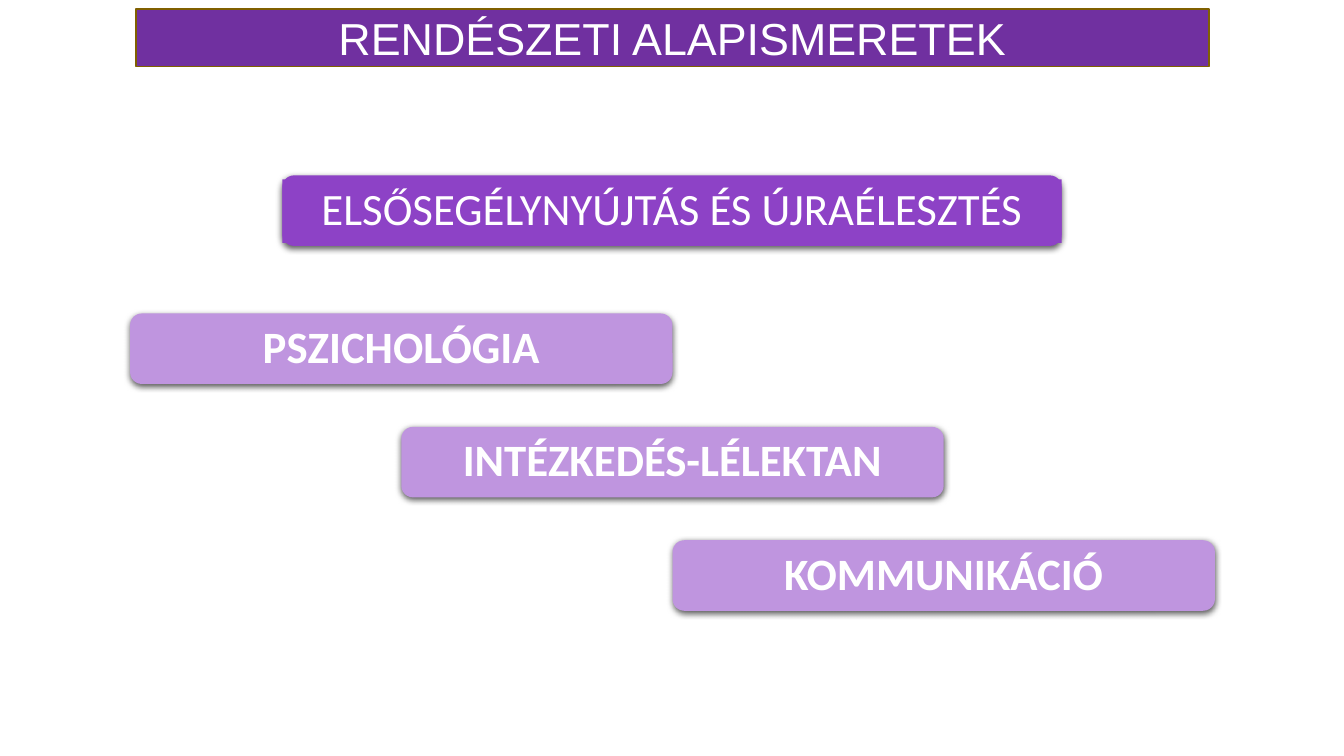
from lxml import etree
from pptx import Presentation
from pptx.dml.color import RGBColor
from pptx.enum.shapes import MSO_SHAPE as SHAPE
from pptx.enum.text import MSO_ANCHOR, MSO_AUTO_SIZE, PP_ALIGN
from pptx.oxml import parse_xml
from pptx.oxml.ns import nsdecls
from pptx.util import Inches, Pt

WHITE = RGBColor(0xFF, 0xFF, 0xFF)
TITLE_PURPLE = RGBColor(0x70, 0x30, 0xA0)
TITLE_EDGE = RGBColor(0x80, 0x60, 0x00)
PURPLE = RGBColor(0x8D, 0x42, 0xC6)
LILAC = RGBColor(0xBF, 0x95, 0xDF)
SHADOW = f"""<a:effectLst {nsdecls('a')}>
  <a:outerShdw blurRad="57150" dist="19050" dir="5400000" algn="ctr" rotWithShape="0">
    <a:srgbClr val="000000"><a:alpha val="63000"/></a:srgbClr>
  </a:outerShdw>
</a:effectLst>"""


def write(sp, text, font="Calibri", bold=False, spacing=0.9):
    tf = sp.text_frame
    tf.word_wrap = True
    tf.auto_size = MSO_AUTO_SIZE.NONE
    tf.vertical_anchor = MSO_ANCHOR.MIDDLE
    tf.margin_top = tf.margin_bottom = 0
    p = tf.paragraphs[0]
    p.alignment = PP_ALIGN.CENTER
    p.line_spacing = spacing
    r = p.add_run()
    r.text = text
    r.font.name, r.font.size, r.font.bold = font, Pt(32), bold
    r.font.color.rgb = WHITE


def add_bar(kind, left, top, width, height, color, shadow=True):
    sp = s.shapes.add_shape(kind, Inches(left), Inches(top), Inches(width), Inches(height))
    sp.fill.solid()
    sp.fill.fore_color.rgb = color
    sp.line.fill.background()
    sp.shadow.inherit = False
    if shadow:
        props = sp.fill._xPr
        props.replace(props.find("{*}effectLst"), parse_xml(SHADOW))
    return sp


prs = Presentation()
prs.slide_width, prs.slide_height = Inches(13.33), Inches(7.5)
s = prs.slides.add_slide(prs.slide_layouts[5])

title = s.shapes.title
title.left, title.top = Inches(1.35), Inches(0.09)
title.width, title.height = Inches(10.64), Inches(0.57)
title.fill.solid()
title.fill.fore_color.rgb = TITLE_PURPLE
title.line.color.rgb = TITLE_EDGE
title.line.width = Pt(1)
write(title, "RENDÉSZETI ALAPISMERETEK", font="Arial", spacing=1.0)

add_bar(SHAPE.ROUNDED_RECTANGLE, 2.8, 1.74, 7.73, 0.7, PURPLE)
first_aid = add_bar(SHAPE.RECTANGLE, 2.8, 1.78, 7.73, 0.63, PURPLE, shadow=False)
write(first_aid, "ELSŐSEGÉLYNYÚJTÁS ÉS ÚJRAÉLESZTÉS")

# Each subject starts half a bar further right
BAR_WIDTH = 5.38
for i, subject in enumerate(["PSZICHOLÓGIA", "INTÉZKEDÉS-LÉLEKTAN", "KOMMUNIKÁCIÓ"]):
    bar = add_bar(SHAPE.ROUNDED_RECTANGLE, 1.29 + i * BAR_WIDTH / 2, 3.11 + i * 1.125,
                  BAR_WIDTH, 0.7, LILAC)
    write(bar, subject, bold=True)

prs.save("out.pptx")
